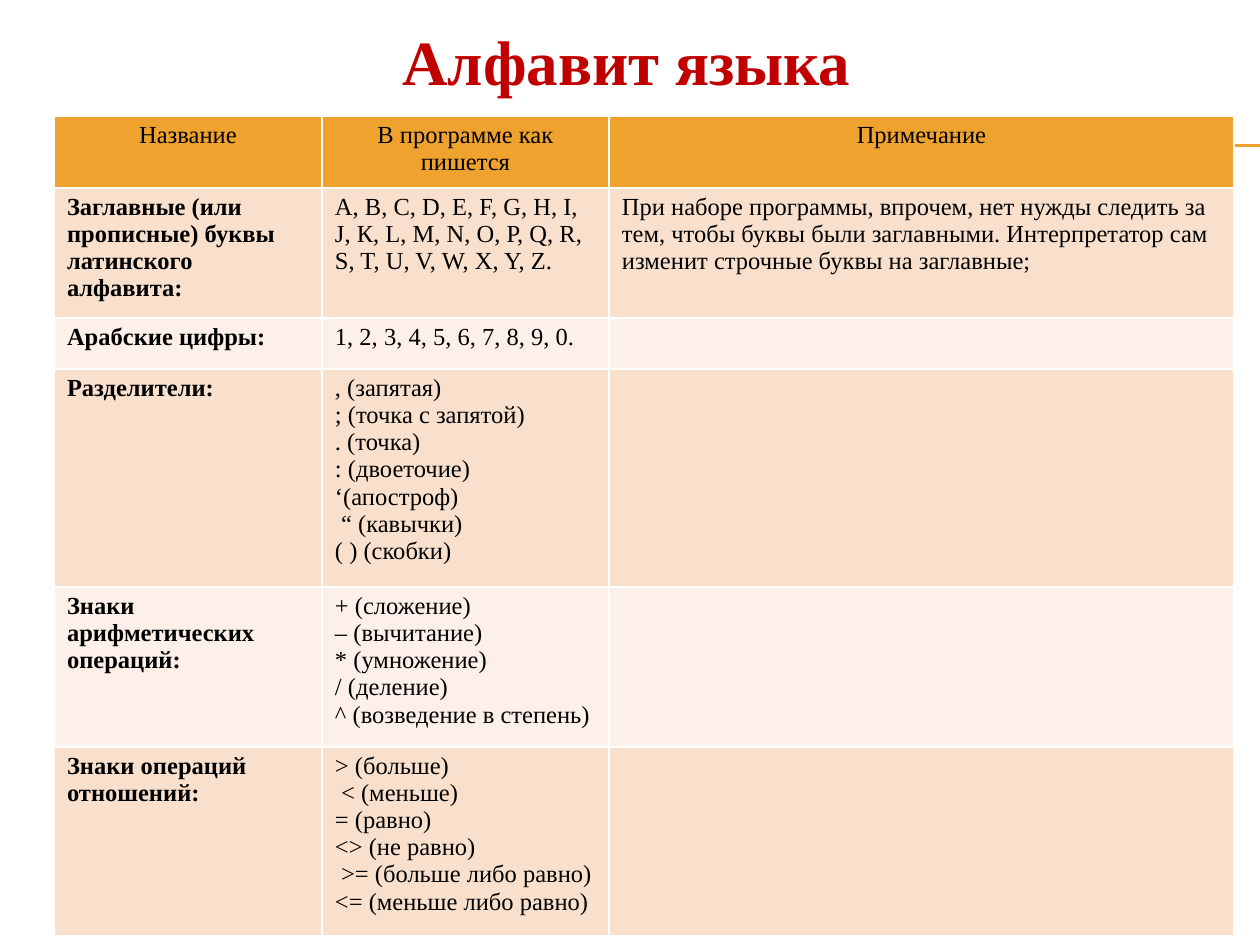
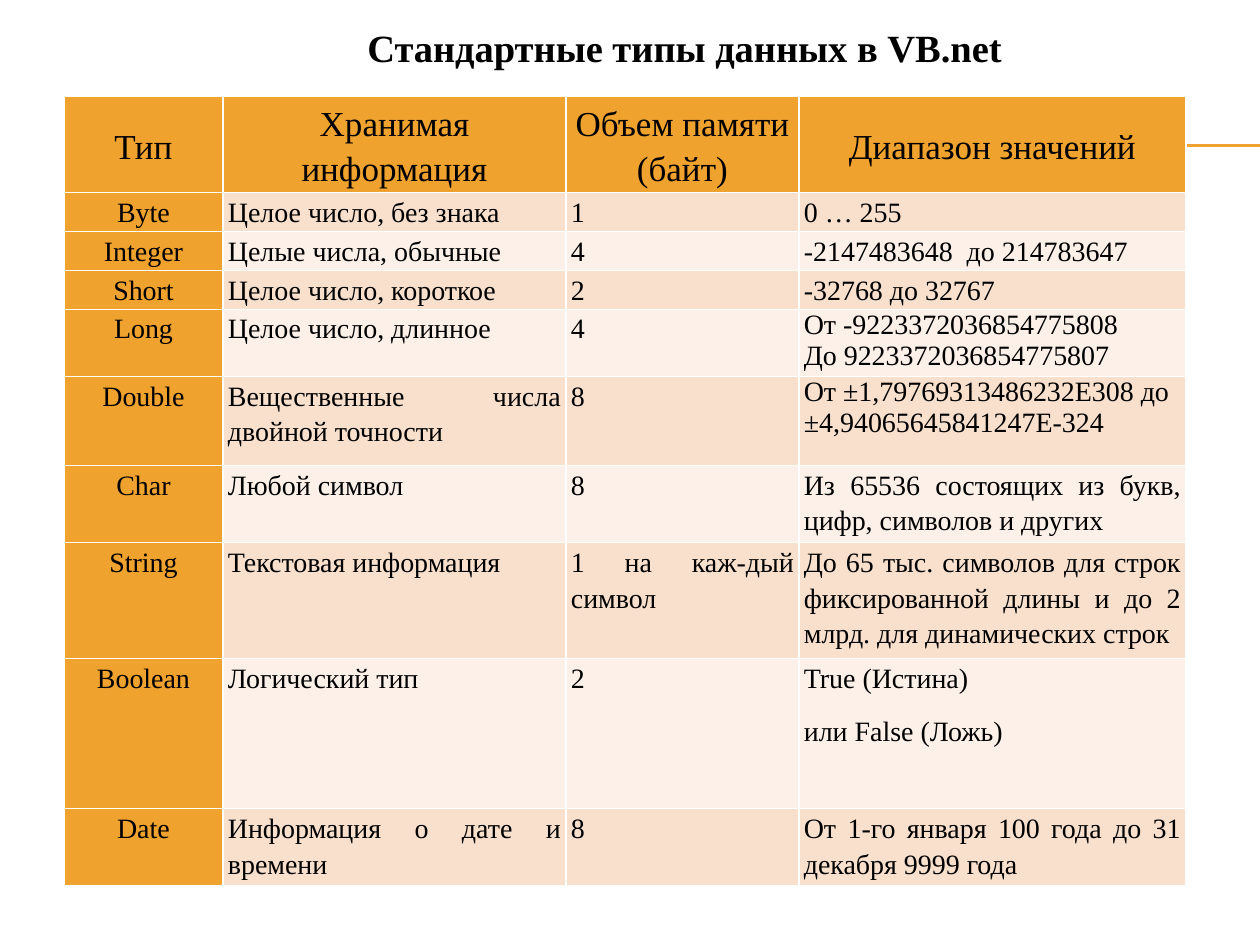
import pptx
import pptx.dml.color
import pptx.enum.shapes
import pptx.enum.text
import pptx.oxml
import pptx.oxml.ns
import pptx.util
from lxml import etree

PX = 914400 / 126
FONT = "Times New Roman"
COLORS = {
    "accent": "F0A22E",
    "band_dark": "F9E0CD",
    "band_light": "FCF0E8",
    "border": "FFFFFF",
    "text": "000000",
    "red": "C00000",
}
ALIGN = pptx.enum.text.PP_ALIGN
ANCHOR = pptx.enum.text.MSO_ANCHOR

alphabet_rows = [
    ["Название", "В программе как пишется", "Примечание"],
    ["Заглавные (или прописные) буквы латинского алфавита:",
     "А, В, С, D, E, F, G, H, I, J, К, L, M, N, О, Р, Q, R, S, T, U, V, W, X, Y, Z.",
     "При наборе программы, впрочем, нет нужды следить за тем, чтобы буквы были "
     "заглавными. Интерпретатор сам изменит строчные буквы на заглавные;"],
    ["Арабские цифры:", "1, 2, 3, 4, 5, 6, 7, 8, 9, 0.", ""],
    ["Разделители:",
     ", (запятая)\n; (точка с запятой)\n. (точка)\n: (двоеточие)\n‘(апостроф)\n"
     " “ (кавычки)\n( ) (скобки)", ""],
    ["Знаки арифметических операций:",
     "+ (сложение)\n– (вычитание)\n* (умножение)\n/ (деление)\n^ (возведение в степень)", ""],
    ["Знаки операций отношений:",
     "> (больше)\n < (меньше)\n= (равно)\n<> (не равно)\n >= (больше либо равно)\n"
     "<= (меньше либо равно)", ""],
]

type_rows = [
    ["Тип", "Хранимая информация", "Объем памяти (байт)", "Диапазон значений"],
    ["Byte", "Целое число, без знака", "1", "0 … 255"],
    ["Integer", "Целые числа, обычные", "4", "-2147483648  до 214783647"],
    ["Short", "Целое число, короткое", "2", "-32768 до 32767"],
    ["Long", "Целое число, длинное", "4", "От -9223372036854775808\nДо 9223372036854775807"],
    ["Double", "Вещественные числа двойной точности", "8",
     "От ±1,79769313486232Е308 до\n±4,94065645841247Е-324"],
    ["Char", "Любой символ", "8", "Из 65536 состоящих из букв, цифр, символов и других"],
    ["String", "Текстовая информация", "1 на каж-дый символ",
     "До 65 тыс. символов для строк фиксированной длины и до 2 млрд. для динамических строк"],
    ["Boolean", "Логический тип", "2", "True (Истина)\nили False (Ложь)"],
    ["Date", "Информация о дате и времени", "8",
     "От 1-го января 100 года до 31 декабря 9999 года"],
]


def px(value):
    return pptx.util.Emu(round(value * PX))


def format_paragraph(paragraph, size, bold, color, alignment):
    paragraph.alignment = alignment
    for run in paragraph.runs:
        run.font.name = FONT
        run.font.size = pptx.util.Pt(size)
        run.font.bold = bold
        run.font.color.rgb = pptx.dml.color.RGBColor.from_string(COLORS[color])


presentation = pptx.Presentation()
presentation.slide_width = px(1260)
presentation.slide_height = px(945)

pages = [
    {"title": "Алфавит языка", "title_box": (387, 16, 479, 89),
     "title_size": 36, "title_color": "red",
     "rows": alphabet_rows, "origin": (54, 116),
     "widths": [268, 287, 625], "heights": [72, 130, 51, 218, 160, 189],
     "header_size": 14, "body_size": 14, "body_alignment": ALIGN.LEFT,
     "header_anchor": ANCHOR.TOP, "margins": (13, 6), "line_spacing": None,
     "first_column_alignment": ALIGN.LEFT, "first_column_bold": True,
     "first_column_accent": False},
    {"title": "Стандартные типы данных в VB.net", "title_box": (352, 18, 665, 59),
     "title_size": 22, "title_color": "text",
     "rows": type_rows, "origin": (64, 96),
     "widths": [159, 343, 233, 387],
     "heights": [96, 39, 39, 38, 67, 89, 77, 116, 150, 77],
     "header_size": 20, "body_size": 16, "body_alignment": ALIGN.JUSTIFY,
     "header_anchor": ANCHOR.MIDDLE, "margins": (5, 0), "line_spacing": 1.15,
     "first_column_alignment": ALIGN.CENTER, "first_column_bold": False,
     "first_column_accent": True},
]

for page in pages:
    slide = presentation.slides.add_slide(presentation.slide_layouts[6])

    for rule_y in (145, 146):
        rule = slide.shapes.add_connector(
            pptx.enum.shapes.MSO_CONNECTOR.STRAIGHT, px(71), px(rule_y), px(1260), px(rule_y))
        rule.line.color.rgb = pptx.dml.color.RGBColor.from_string(COLORS["accent"])
        rule.line.width = pptx.util.Pt(0.75)
        etree.SubElement(rule._element.spPr, pptx.oxml.ns.qn("a:effectLst"))

    title = slide.shapes.add_textbox(*map(px, page["title_box"]))
    title.text_frame.word_wrap = False
    title.text_frame.text = page["title"]
    format_paragraph(title.text_frame.paragraphs[0], page["title_size"], True,
                     page["title_color"], ALIGN.CENTER)

    widths, heights = page["widths"], page["heights"]
    left, top = page["origin"]
    table = slide.shapes.add_table(
        len(heights), len(widths), px(left), px(top), px(sum(widths)), px(sum(heights))).table
    for column, width in zip(table.columns, widths):
        column.width = px(width)
    for row, height in zip(table.rows, heights):
        row.height = px(height)

    for row_index, texts in enumerate(page["rows"]):
        is_header = row_index == 0
        for column_index, text in enumerate(texts):
            is_first_column = column_index == 0
            cell = table.cell(row_index, column_index)
            cell.margin_left = cell.margin_right = px(page["margins"][0])
            cell.margin_top = cell.margin_bottom = px(page["margins"][1])
            cell.vertical_anchor = page["header_anchor"] if is_header else ANCHOR.TOP

            for side in ("lnL", "lnR", "lnT", "lnB"):
                cell._tc.get_or_add_tcPr().append(pptx.oxml.parse_xml(
                    f'<a:{side} {pptx.oxml.ns.nsdecls("a")} w="12700"><a:solidFill>'
                    f'<a:srgbClr val="{COLORS["border"]}"/></a:solidFill></a:{side}>'))

            if is_header or (is_first_column and page["first_column_accent"]):
                fill = "accent"
            else:
                fill = "band_dark" if row_index % 2 else "band_light"
            cell.fill.solid()
            cell.fill.fore_color.rgb = pptx.dml.color.RGBColor.from_string(COLORS[fill])

            if is_header:
                size, bold, alignment = page["header_size"], False, ALIGN.CENTER
            elif is_first_column:
                size, bold = page["body_size"], page["first_column_bold"]
                alignment = page["first_column_alignment"]
            else:
                size, bold, alignment = page["body_size"], False, page["body_alignment"]

            cell.text_frame.text = text
            for paragraph in cell.text_frame.paragraphs:
                format_paragraph(paragraph, size, bold, "text", alignment)
                # Numeric limits split over two lines are set solid
                if texts[0] not in ("Long", "Double") or column_index < 3:
                    paragraph.line_spacing = page["line_spacing"]
                if texts[0] == "Boolean" and column_index == 3:
                    paragraph.space_after = pptx.util.Pt(10)

presentation.save("out.pptx")
